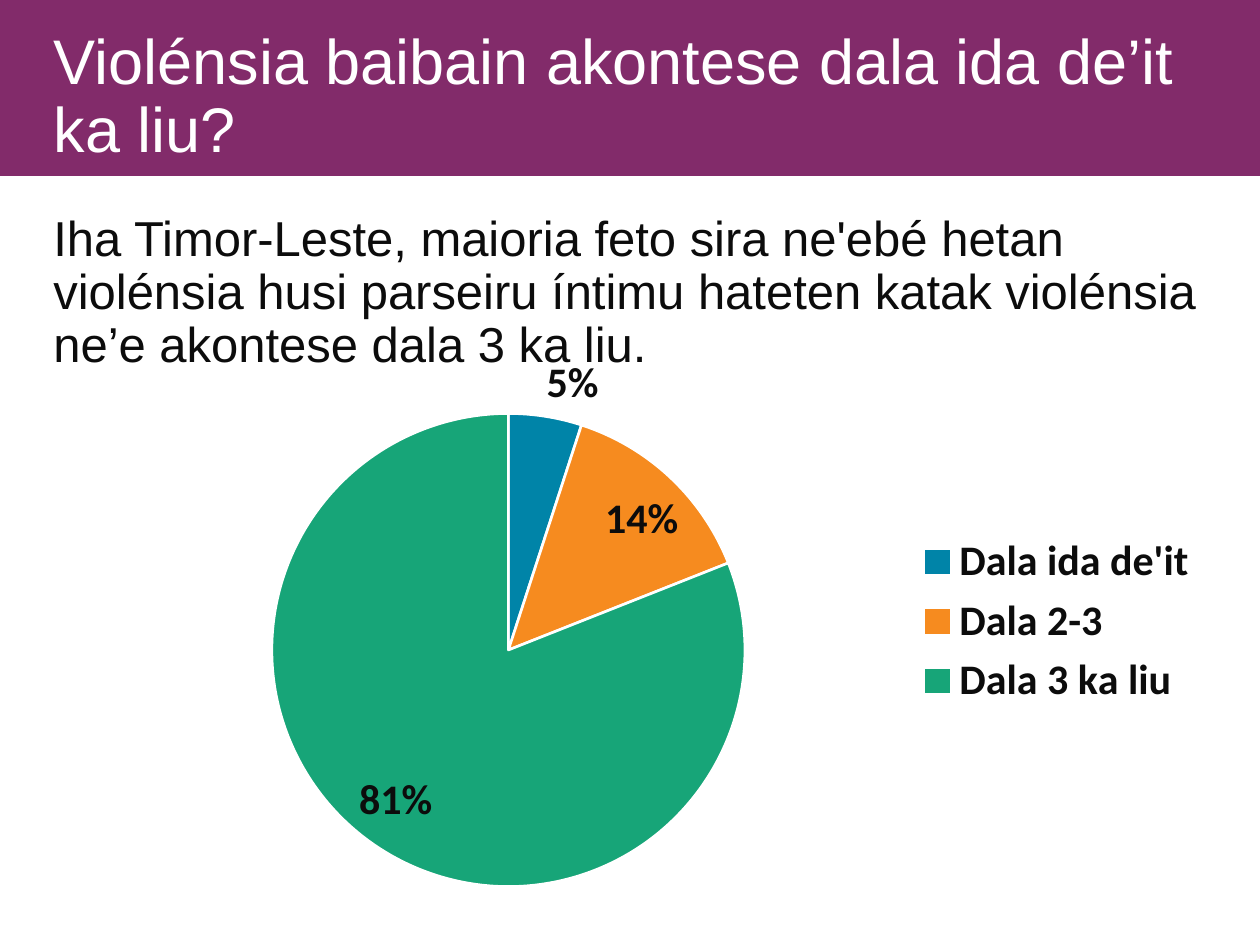
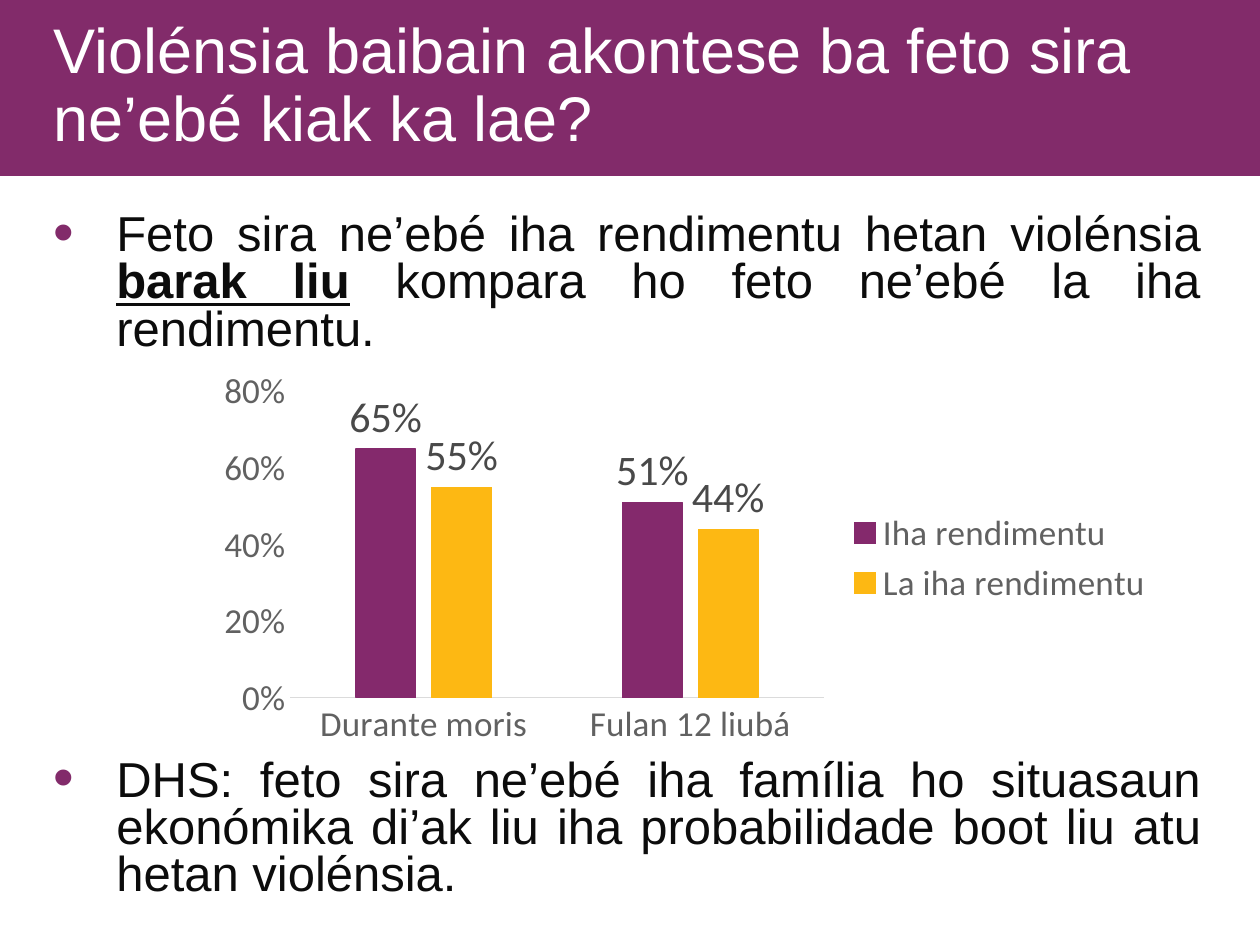
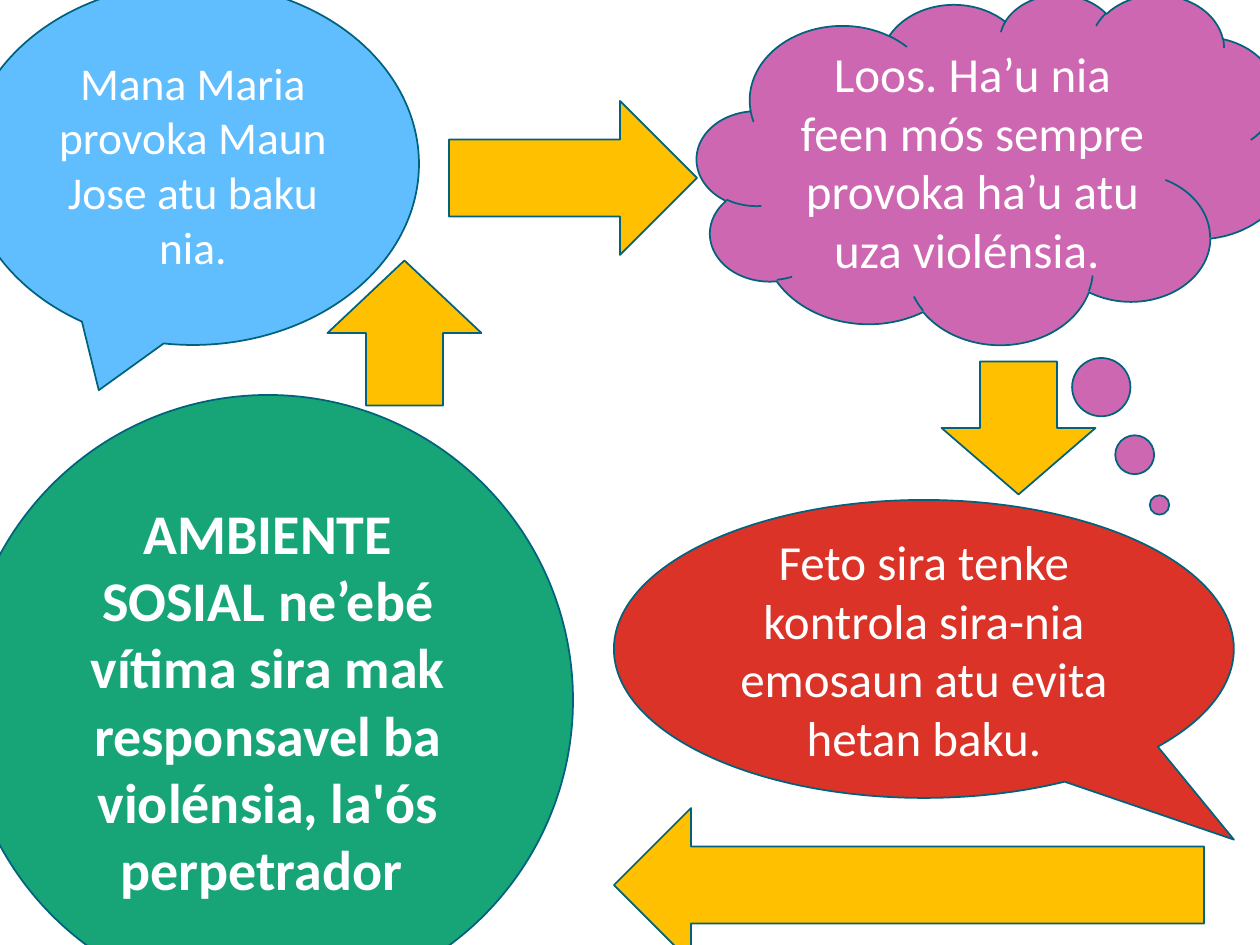
"""Build three slides on how often violence occurs and how it is excused."""
from lxml import etree
from pptx import Presentation
from pptx.chart.data import CategoryChartData
from pptx.dml.color import RGBColor
from pptx.enum.chart import XL_CHART_TYPE, XL_LABEL_POSITION, XL_LEGEND_POSITION, XL_TICK_MARK
from pptx.enum.shapes import MSO_SHAPE
from pptx.enum.text import MSO_ANCHOR, MSO_AUTO_SIZE, PP_ALIGN
from pptx.oxml.ns import qn
from pptx.util import Pt

PX = 914400 / 126
HUES = {
    "band": "822B6A", "white": "FFFFFF", "ink": "0C0C0C", "edge": "00627C",
    "blue": "0084A8", "orange": "F68B1F", "green": "17A578",
    "plum": "84296C", "gold": "FDB813", "grey": "616161", "dark": "494949",
    "rule": "DBDBDB", "sky": "60BEFF", "pink": "CD67B1", "red": "DB3328",
    "arrow": "FFC000",
}
RECT = MSO_SHAPE.RECTANGLE
OVAL = MSO_SHAPE.OVAL
ARROW = MSO_SHAPE.RIGHT_ARROW
SPEECH = MSO_SHAPE.OVAL_CALLOUT
CLOUD = MSO_SHAPE.CLOUD_CALLOUT
PIE = XL_CHART_TYPE.PIE
COLUMN = XL_CHART_TYPE.COLUMN_CLUSTERED
BEST = XL_LABEL_POSITION.BEST_FIT
ABOVE = XL_LABEL_POSITION.OUTSIDE_END
RIGHT = XL_LEGEND_POSITION.RIGHT
NO_TICK = XL_TICK_MARK.NONE
TOP = MSO_ANCHOR.TOP
MIDDLE = MSO_ANCHOR.MIDDLE
NO_FIT = MSO_AUTO_SIZE.NONE
LEFT = PP_ALIGN.LEFT
CENTER = PP_ALIGN.CENTER
JUSTIFY = PP_ALIGN.JUSTIFY

TITLE = {"size": 36, "name": "Arial", "hue": "white"}
BODY = {"size": 28, "name": "Arial", "hue": "ink"}
BOLD = {"size": 24, "name": "Calibri", "hue": "ink", "bold": True}
AXIS = {"size": 20, "name": "Calibri", "hue": "grey"}
VALUE = {"size": 24, "name": "Calibri", "hue": "dark"}


def emu(*sizes):
    """Turn pixels into EMU."""
    return [round(size * PX) for size in sizes]


def rgb(hue):
    """Look up a colour by name."""
    return RGBColor.from_string(HUES[hue])


def put(item, **values):
    """Set each named attribute on an item."""
    for key, value in values.items():
        setattr(item, key, value)


def style(font, size, hue, **more):
    """Format a font."""
    put(font, size=Pt(size), **more)
    font.color.rgb = rgb(hue)


def fill(item, hue, edge=None, width=1):
    """Give a shape or chart part a fill and an outline."""
    item.fill.solid()
    item.fill.fore_color.rgb = rgb(hue)
    if edge:
        item.line.color.rgb = rgb(edge)
        item.line.width = Pt(width)
    else:
        item.line.fill.background()


def shape(slide, kind, box, hue, edge=None, turn=0, tip=()):
    """Draw a filled preset shape."""
    item = slide.shapes.add_shape(kind, *emu(*box))
    item.shadow.inherit = False
    item.rotation = turn
    for index, value in enumerate(tip):
        item.adjustments[index] = value
    fill(item, hue, edge)
    return item


def write(para, runs, look):
    """Fill a paragraph with runs of text and extra formats."""
    for text, more in runs:
        run = para.add_run()
        run.text = text
        style(run.font, **look, **more)


def head(deck, text, top):
    """Add a slide with the band and a title."""
    slide = deck.slides.add_slide(deck.slide_layouts[5])
    band = shape(slide, RECT, (0, 0, 1260, 176), "band")
    slide.shapes._spTree.insert(2, band._element)
    title = slide.shapes.title
    left, top, width, height = emu(41, top, 1172, 86)
    put(title, left=left, top=top, width=width, height=height)
    put(title.text_frame, word_wrap=True, auto_size=NO_FIT, vertical_anchor=TOP)
    para = title.text_frame.paragraphs[0]
    put(para, alignment=LEFT, line_spacing=0.9, space_before=Pt(0))
    write(para, [(text, {})], TITLE)
    return slide


def bullet(para):
    """Give a paragraph a hanging coloured bullet."""
    props = para._p.get_or_add_pPr()
    indent = emu(63)[0]
    props.set("marL", str(indent))
    props.set("indent", str(-indent))
    color = etree.SubElement(props, qn("a:buClr"))
    etree.SubElement(color, qn("a:srgbClr"), val=HUES["band"])
    etree.SubElement(props, qn("a:buSzPct"), val="120000")
    etree.SubElement(props, qn("a:buFont"), typeface="Arial")
    etree.SubElement(props, qn("a:buChar"), char="•")


def body(slide, box, paras, gap=0, marked=False, **form):
    """Add body text on white, with a gap between its paragraphs."""
    item = slide.shapes.add_textbox(*emu(*box))
    fill(item, "white")
    frame = item.text_frame
    frame.word_wrap = True
    for index, runs in enumerate(paras):
        para = frame.add_paragraph() if index else frame.paragraphs[0]
        if marked:
            bullet(para)
        put(para, space_before=Pt(gap if index else 0), **form)
        write(para, runs, BODY)


def graph(slide, kind, box, cats, rows, key, label, spot):
    """Add a chart with a legend and percent labels."""
    data = CategoryChartData(number_format="0%")
    data.categories = cats
    for name, values in rows:
        data.add_series(name, values)
    chart = slide.shapes.add_chart(kind, *emu(*box), data).chart
    put(chart, has_title=False, has_legend=True)
    style(chart.font, 10, "ink", name="Calibri")
    put(chart.legend, position=RIGHT, include_in_layout=False)
    style(chart.legend.font, **key)
    plot = chart.plots[0]
    plot.has_data_labels = True
    put(plot.data_labels, show_value=True, show_percentage=False, position=spot,
        number_format="0%", number_format_is_linked=False)
    style(plot.data_labels.font, **label)
    return chart


def pie(slide):
    """Draw the pie of how often violence occurs."""
    chart = graph(slide, PIE, (146, 339, 1067, 565),
                  ["Dala ida de'it", "Dala 2-3", "Dala 3 ka liu"],
                  [("Series 1", (0.05, 0.14, 0.81))], BOLD, BOLD, BEST)
    plot = chart.plots[0]
    plot.vary_by_categories = True
    for index, hue in enumerate(("blue", "orange", "green")):
        fill(plot.series[0].points[index].format, hue, "white", 1.5)


def bars(slide):
    """Draw the columns of violence by income."""
    chart = graph(slide, COLUMN, (205, 362, 962, 392),
                  ["Durante moris", "Fulan 12 liubá"],
                  [("Iha rendimentu", (0.65, 0.51)), ("La iha rendimentu", (0.55, 0.44))],
                  AXIS, VALUE, ABOVE)
    plot = chart.plots[0]
    put(plot, gap_width=219, overlap=-27, vary_by_categories=False)
    for row, hue in zip(plot.series, ("plum", "gold")):
        fill(row.format, hue, hue, 0.75)
    for axis in (chart.category_axis, chart.value_axis):
        put(axis, major_tick_mark=NO_TICK, minor_tick_mark=NO_TICK,
            has_major_gridlines=False)
        style(axis.tick_labels.font, **AXIS)
    line = chart.category_axis.format.line
    line.color.rgb = rgb("rule")
    line.width = Pt(0.75)
    axis = chart.value_axis
    put(axis, minimum_scale=0, maximum_scale=0.8, major_unit=0.2)
    put(axis.tick_labels, number_format="0%", number_format_is_linked=False)
    axis.format.line.fill.background()


def bubble(slide, kind, box, hue, text, size, tip=(), bold=False):
    """Draw a shape with centred white words."""
    frame = shape(slide, kind, box, hue, "edge", tip=tip).text_frame
    put(frame, word_wrap=True, vertical_anchor=MIDDLE)
    para = frame.paragraphs[0]
    para.alignment = CENTER
    look = {"size": size, "name": "Calibri", "hue": "white", "bold": bold}
    write(para, [(text, {})], look)


def cycle(deck):
    """Draw the cycle of excuses."""
    slide = deck.slides.add_slide(deck.slide_layouts[6])
    bubble(slide, SPEECH, (-33, -17, 452, 362), "sky",
           "Mana Maria provoka Maun Jose atu baku nia.", 26)
    bubble(slide, CLOUD, (697, -6, 593, 350), "pink",
           "Loos. Ha’u nia feen mós sempre provoka ha’u atu uza violénsia. ",
           28, (0.28, 0.96))
    bubble(slide, SPEECH, (614, 500, 620, 298), "red",
           "Feto sira tenke kontrola sira-nia emosaun atu evita hetan baku.",
           28, (0.5, 0.64))
    bubble(slide, OVAL, (-37, 395, 610, 610), "green",
           "AMBIENTE SOSIAL ne’ebé vítima sira mak responsavel ba violénsia, "
           "la'ós perpetrador ", 32, bold=True)
    for left, top, width, turn in ((449, 101, 248, 0), (614, 808, 590, 180),
                                   (332, 256, 145, 270), (952, 351, 133, 90)):
        shape(slide, ARROW, (left, top, width, 154), "arrow", "edge", turn)


def main():
    """Build and save the deck."""
    deck = Presentation()
    deck.slide_width, deck.slide_height = emu(1260, 945)

    slide = head(deck, "Violénsia baibain akontese dala ida de’it ka liu?", 24)
    body(slide, (41, 208, 1207, 622), [[(
        "Iha Timor-Leste, maioria feto sira ne'ebé hetan violénsia husi parseiru "
        "íntimu hateten katak violénsia ne’e akontese dala 3 ka liu.", {})]],
        line_spacing=0.9)
    pie(slide)

    slide = head(deck, "Violénsia baibain akontese ba feto sira ne’ebé kiak ka lae?", 13)
    body(slide, (41, 208, 1172, 737), [
        [("Feto sira ne’ebé iha rendimentu hetan violénsia ", {}),
         ("barak liu", {"bold": True, "underline": True}),
         (" kompara ho feto ne’ebé la iha rendimentu.", {})],
        [("DHS: feto sira ne’ebé iha família ho situasaun ekonómika di’ak liu "
          "iha probabilidade boot liu atu hetan violénsia.", {})]],
        gap=231, marked=True, alignment=JUSTIFY, line_spacing=0.8)
    bars(slide)

    cycle(deck)
    deck.save("out.pptx")


if __name__ == "__main__":
    main()
